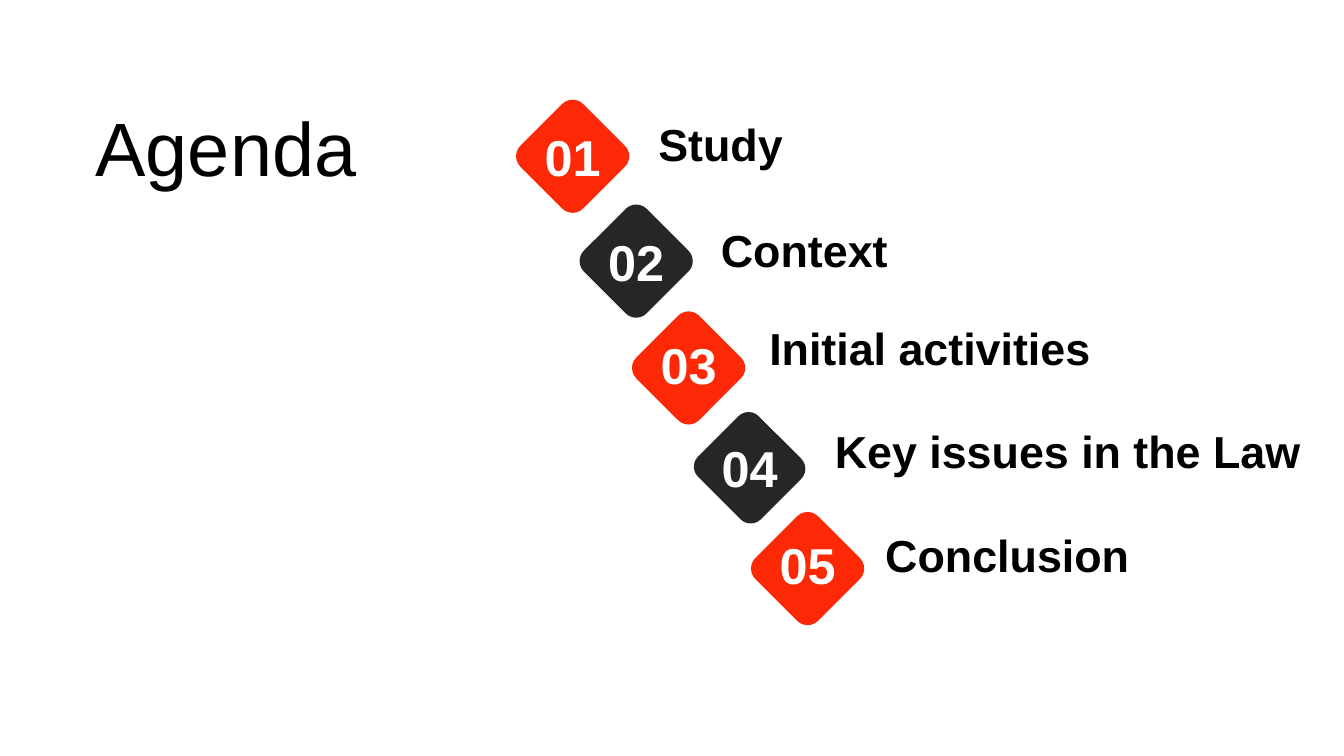
from dataclasses import dataclass

from pptx import Presentation
from pptx.dml.color import RGBColor
from pptx.enum.shapes import MSO_SHAPE as Shape
from pptx.enum.text import MSO_ANCHOR as Anchor, MSO_AUTO_SIZE as AutoSize, PP_ALIGN as Align
from pptx.util import Inches, Pt


@dataclass(frozen=True)
class Theme:
    font: str = "Arial"
    ink: str = "000000"
    light: str = "FFFFFF"
    accents: tuple = ("FD2906", "262626")
    title_size: int = 54
    number_size: int = 36
    label_size: int = 32


@dataclass(frozen=True)
class AgendaItem:
    label: str
    diamond: tuple  # left, top, width
    number: tuple  # top, width
    label_at: tuple  # left, top, width


AGENDA = [
    AgendaItem("Study", (5.24, 1.11, 0.88), (1.2, 1.05), (6.41, 1.11, 4.43)),
    AgendaItem("Context", (5.87, 2.15, 0.88), (2.24, 1.05), (7.03, 2.16, 4.43)),
    AgendaItem("Initial activities", (6.39, 3.21, 0.88), (3.27, 1.12), (7.51, 3.13, 4.95)),
    AgendaItem("Key issues in the Law", (7.01, 4.2, 0.85), (4.29, 1.01), (8.16, 4.15, 4.87)),
    AgendaItem("Conclusion", (7.57, 5.2, 0.88), (5.25, 1.12), (8.66, 5.19, 4.95)),
]
DIAMOND_HEIGHT = 0.88
NUMBER_HEIGHT = 0.71
LABEL_HEIGHT = 0.64


class AgendaSlide:
    def __init__(self, page, theme):
        self.page = page
        self.theme = theme

    def text(self, words, bounds, size, color, bold=True, align=Align.LEFT,
             anchor=Anchor.TOP, side_inset=0.12):
        box = self.page.shapes.add_textbox(*map(Inches, bounds))
        frame = box.text_frame
        frame_format = {
            "word_wrap": True,
            "auto_size": AutoSize.SHAPE_TO_FIT_TEXT,
            "vertical_anchor": anchor,
            "margin_left": Inches(side_inset),
            "margin_right": Inches(side_inset),
        }
        for name, value in frame_format.items():
            setattr(frame, name, value)
        para = frame.paragraphs[0]
        para.alignment = align
        span = para.add_run()
        span.text = words
        for name, value in {"name": self.theme.font, "size": Pt(size), "bold": bold}.items():
            setattr(span.font, name, value)
        span.font.color.rgb = RGBColor.from_string(color)

    def title(self, words):
        self.text(words, (0.85, 0.95, 2.97, 1.01), self.theme.title_size, self.theme.ink,
                  bold=False, anchor=Anchor.MIDDLE, side_inset=0.1)

    def diamond(self, bounds, color):
        shape = self.page.shapes.add_shape(Shape.ROUNDED_RECTANGLE, *map(Inches, bounds))
        shape.rotation = 315
        shape.shadow.inherit = False
        shape.fill.solid()
        shape.fill.fore_color.rgb = RGBColor.from_string(color)
        shape.line.fill.background()

    def item(self, index, entry):
        """Draw one step: diamond, number centred across it, and label."""
        theme = self.theme
        left, top, width = entry.diamond
        self.diamond((left, top, width, DIAMOND_HEIGHT),
                     theme.accents[index % len(theme.accents)])
        number_top, number_width = entry.number
        number_left = left + (width - number_width) / 2
        self.text(f"{index + 1:02d}", (number_left, number_top, number_width, NUMBER_HEIGHT),
                  theme.number_size, theme.light, align=Align.CENTER)
        self.text(entry.label, (*entry.label_at, LABEL_HEIGHT), theme.label_size, theme.ink)


def main():
    deck = Presentation()
    deck.slide_width, deck.slide_height = Inches(13.33), Inches(7.5)
    page = deck.slides.add_slide(deck.slide_layouts[6])
    agenda = AgendaSlide(page, Theme())
    agenda.title("Agenda")
    for index, entry in enumerate(AGENDA):
        agenda.item(index, entry)
    deck.save("out.pptx")


if __name__ == "__main__":
    main()
